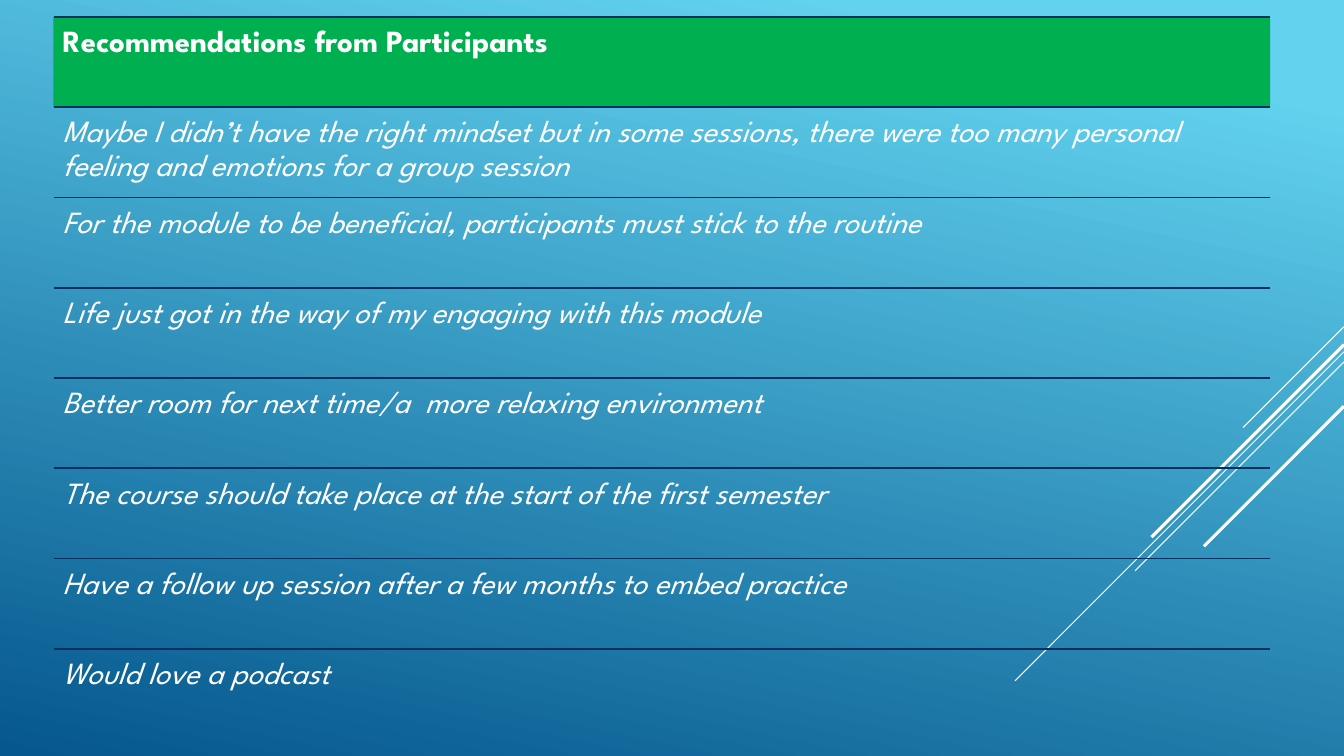
from lxml import etree
from pptx import Presentation
from pptx.dml.color import RGBColor
from pptx.enum.shapes import MSO_CONNECTOR, MSO_SHAPE
from pptx.enum.text import MSO_ANCHOR, PP_ALIGN
from pptx.oxml.ns import qn
from pptx.util import Pt

STRAIGHT = MSO_CONNECTOR.STRAIGHT
RECT = MSO_SHAPE.RECTANGLE
TOP = MSO_ANCHOR.TOP
LEFT = PP_ALIGN.LEFT

WHITE = RGBColor(0xFF, 0xFF, 0xFF)
NAVY = RGBColor(0x02, 0x2F, 0x61)
GREEN = RGBColor(0x00, 0xB0, 0x50)
SKY = RGBColor(0x62, 0xD2, 0xEF)
DEEP = RGBColor(0x05, 0x57, 0x8D)

SLIDE_W, SLIDE_H = 960, 540
LIST_X, LIST_Y, LIST_W, ROW_H = 38.25, 12, 869, 64.5

STREAKS = [
    (233.4, 72, 0.75),
    (251.3, 235, 0.75),
    (258.5, 149.2, 0.75),
    (246.2, 137.5, 2.25),
    (290.2, 100, 2.25),
]

HEADING = "Recommendations from Participants"
COMMENTS = [
    "Maybe I didn’t have the right mindset but in some sessions, there were "
    "too many personal feeling and emotions for a group session",
    "For the module to be beneficial, participants must stick to the routine",
    "Life just got in the way of my engaging with this module",
    "Better room for next time/a  more relaxing environment",
    "The course should take place at the start of the first semester",
    "Have a follow up session after a few months to embed practice",
    "Would love a podcast",
]


def add_text(tf, text, font="League Spartan", size=22, color=WHITE,
             bold=False, italic=False, spacing=0.9):
    """Write one formatted paragraph into a text frame."""
    p = tf.paragraphs[0]
    p.alignment = LEFT
    p.line_spacing = spacing
    r = p.add_run()
    r.text = text
    r.font.name = font
    r.font.size = Pt(size)
    r.font.color.rgb = color
    r.font.bold = bold
    r.font.italic = italic


class Deck:
    """Hold the style and the current slide."""

    inset = 6.6

    def __init__(self, prs):
        """Add a blank slide to draw on."""
        self.s = prs.slides.add_slide(prs.slide_layouts[6])

    def background(self, start, end, angle):
        """Fill the slide with a linear gradient."""
        fill = self.s.background.fill
        fill.gradient()
        fill.gradient_angle = angle
        first, last = fill.gradient_stops
        first.position = 0.1
        first.color.rgb = start
        last.color.rgb = end

    def line(self, x1, y1, x2, y2, color, width):
        """Draw a straight line without a shadow."""
        sp = self.s.shapes.add_connector(STRAIGHT, Pt(x1), Pt(y1), Pt(x2), Pt(y2))
        sp.line.color.rgb = color
        sp.line.width = Pt(width)
        etree.SubElement(sp._element.spPr, qn("a:effectLst"))

    def row(self, x, y, w, h, text, fill=None, **fmt):
        """Draw one list row, filled or plain, with a rule on top."""
        if fill is None:
            sp = self.s.shapes.add_textbox(Pt(x), Pt(y), Pt(w), Pt(h))
        else:
            sp = self.s.shapes.add_shape(RECT, Pt(x), Pt(y), Pt(w), Pt(h))
            sp.shadow.inherit = False
            sp.fill.solid()
            sp.fill.fore_color.rgb = fill
            sp.line.fill.background()
        tf = sp.text_frame
        tf.word_wrap = True
        tf.vertical_anchor = TOP
        tf.margin_left = tf.margin_right = Pt(self.inset)
        tf.margin_top = tf.margin_bottom = Pt(self.inset)
        add_text(tf, text, **fmt)
        self.line(x, y, x + w, y, NAVY, 1.25)


def main():
    """Build and save the slide."""
    prs = Presentation()
    prs.slide_width, prs.slide_height = Pt(SLIDE_W), Pt(SLIDE_H)
    deck = Deck(prs)
    deck.background(SKY, DEEP, 258)
    for y, run, width in STREAKS:
        deck.line(SLIDE_W, y, SLIDE_W - run, y + run, WHITE, width)
    deck.row(LIST_X, LIST_Y, LIST_W, ROW_H, HEADING, fill=GREEN, bold=True)
    for i, comment in enumerate(COMMENTS, start=1):
        deck.row(LIST_X, LIST_Y + i * ROW_H, LIST_W, ROW_H, comment, italic=True)
    prs.save("out.pptx")


if __name__ == "__main__":
    main()
